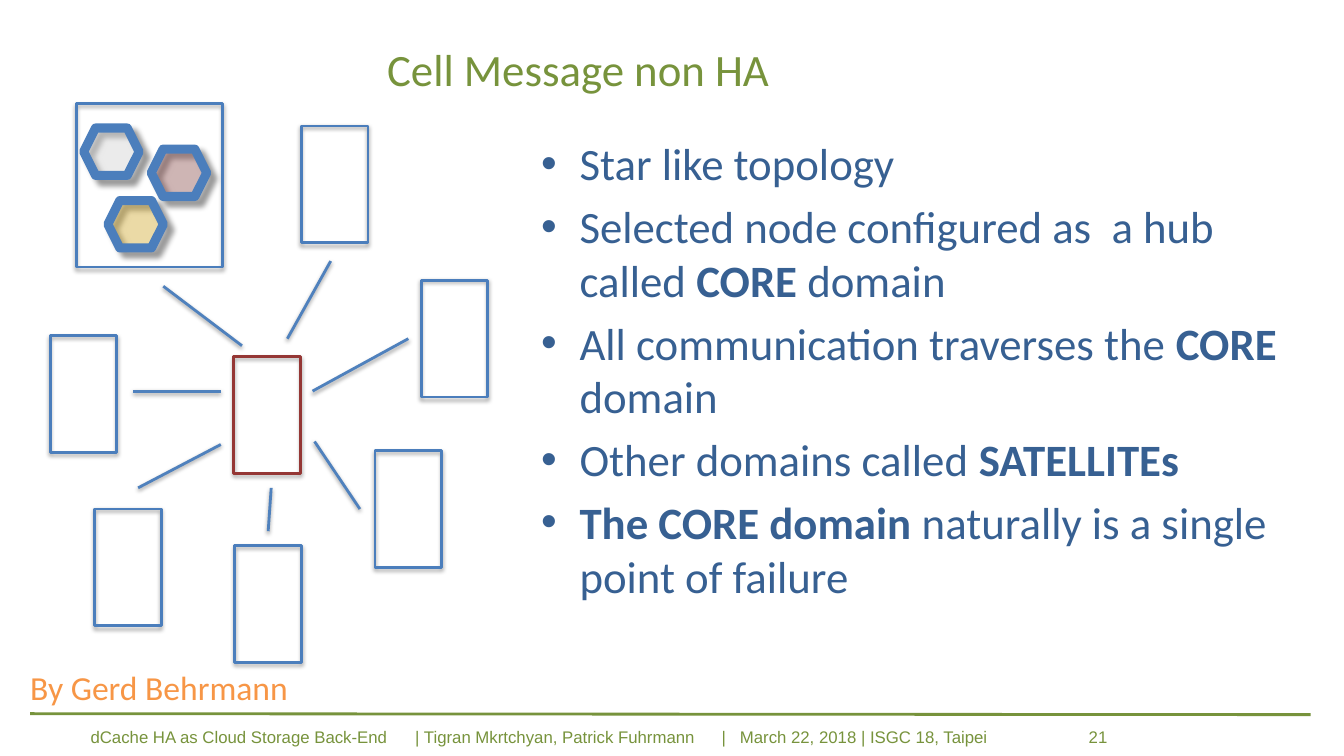
from dataclasses import dataclass
from typing import NamedTuple

from lxml.etree import SubElement
from pptx import Presentation
from pptx.dml.color import RGBColor
from pptx.enum.shapes import MSO_CONNECTOR, MSO_SHAPE
from pptx.enum.text import PP_ALIGN
from pptx.oxml.ns import qn
from pptx.util import Inches, Pt


class Box(NamedTuple):
    left: float
    top: float
    width: float
    height: float


class Shadow(NamedTuple):
    opacity: int
    blur: float
    distance: float
    angle: int


@dataclass(frozen=True)
class Theme:
    green: str = "77933C"
    body_blue: str = "376092"
    node_blue: str = "4B7EBC"
    link_blue: str = "4F81BD"
    core_red: str = "953735"
    orange: str = "F79646"
    white: str = "FFFFFF"
    gold: str = "FFC000"
    font: str = "Calibri"
    footer_font: str = "Arial"
    large: int = 32
    credit: int = 24
    footer: int = 12
    line: float = 2
    cell_line: float = 6.5
    cell_opacity: int = 27
    node_shadow: Shadow = Shadow(35, 3.1, 1.8, 90)
    link_shadow: Shadow = Shadow(38, 3.1, 1.6, 90)
    cell_shadow: Shadow = Shadow(40, 4, 6, 45)


THEME = Theme()

BULLETS = [
    [("Star like topology", False)],
    [("Selected node configured as  a hub called ", False), ("CORE", True), (" domain", False)],
    [("All communication traverses the ", False), ("CORE", True), (" domain", False)],
    [("Other domains called ", False), ("SATELLITEs", True)],
    [("The CORE domain ", True), ("naturally is a single point of failure", False)],
]
FOOTER = "dCache HA as Cloud Storage Back-End\t| Tigran Mkrtchyan, Patrick Fuhrmann\t|\tMarch 22, 2018 | ISGC 18, Taipei\t21"
FOOTER_TABS = [3.22, 6.26, 6.44, 9.9]

NODE_SIZE = (0.66, 1.16)
CELL_SIZE = (0.55, 0.47)
DETAILED_NODE_SIZE = (1.45, 1.62)
CORE_OFFSET = (1.82, 2.51)
DETAILED_NODE_FROM_CORE = (-1.56, -2.51)
SATELLITES_FROM_CORE = [
    (-1.82, -0.21), (-1.38, 1.51), (0.01, 1.87),
    (1.4, 0.93), (1.86, -0.76), (0.67, -2.29),
]
LINKS_FROM_CORE = [
    (0.96, -0.95, 0.53, -0.18),
    (-0.7, -0.7, 0.08, -0.11),
    (-1, 0.34, -0.13, 0.34),
    (-0.95, 1.3, -0.13, 0.87),
    (0.34, 1.73, 0.37, 1.3),
    (0.78, 0.34, 1.73, -0.18),
    (0.8, 0.84, 1.25, 1.51),
]
CELLS = [
    (0.07, 0.24, THEME.white),
    (0.31, 0.96, THEME.gold),
    (0.74, 0.45, THEME.core_red),
]


def add_text(slide, box, paragraphs, *, size, color, font=THEME.font,
             align=PP_ALIGN.LEFT, bullet=None, indent=0.38, tabs=()):
    frame = slide.shapes.add_textbox(*map(Inches, box)).text_frame
    frame.word_wrap = True
    for index, runs in enumerate(paragraphs):
        paragraph = frame.paragraphs[0] if index == 0 else frame.add_paragraph()
        properties = paragraph._p.get_or_add_pPr()
        if bullet:
            properties.set("marL", str(Inches(indent)))
            properties.set("indent", str(-Inches(indent)))
            SubElement(properties, qn("a:buFont"), typeface="Arial")
            SubElement(properties, qn("a:buChar"), char=bullet)
        if tabs:
            tab_list = SubElement(properties, qn("a:tabLst"))
            for position in tabs:
                SubElement(tab_list, qn("a:tab"), pos=str(Inches(position)), algn="l")
        paragraph.alignment = align
        if index:
            paragraph.space_before = Pt(size * 0.2)
        for text, bold in runs:
            run = paragraph.add_run()
            run.text = text
            run.font.name = font
            run.font.size = Pt(size)
            run.font.bold = bold
            run.font.color.rgb = RGBColor.from_string(color)


def add_shadow(effects, shadow):
    outer = SubElement(
        effects, qn("a:outerShdw"), blurRad=str(Pt(shadow.blur)),
        dist=str(Pt(shadow.distance)), dir=str(shadow.angle * 60000),
        algn="ctr", rotWithShape="0")
    color = SubElement(outer, qn("a:srgbClr"), val="000000")
    SubElement(color, qn("a:alpha"), val=str(shadow.opacity * 1000))


def add_outline(slide, kind, box, *, line_color, line_width, shadow, fill=None):
    shape = slide.shapes.add_shape(kind, *map(Inches, box))
    shape.shadow.inherit = False
    shape.line.color.rgb = RGBColor.from_string(line_color)
    shape.line.width = Pt(line_width)
    if fill:
        shape.fill.solid()
        shape.fill.fore_color.rgb = RGBColor.from_string(fill)
        color = shape._element.spPr.find(f"{qn('a:solidFill')}/{qn('a:srgbClr')}")
        SubElement(color, qn("a:alpha"), val=str(THEME.cell_opacity * 1000))
    else:
        shape.fill.background()
    add_shadow(shape._element.spPr.find(qn("a:effectLst")), shadow)


def add_line(slide, ends, *, color, shadow=None):
    connector = slide.shapes.add_connector(MSO_CONNECTOR.STRAIGHT, *map(Inches, ends))
    connector.line.color.rgb = RGBColor.from_string(color)
    connector.line.width = Pt(THEME.line)
    effects = SubElement(connector._element.spPr, qn("a:effectLst"))
    if shadow:
        add_shadow(effects, shadow)


def add_node(slide, left, top, size=NODE_SIZE, color=THEME.node_blue):
    add_outline(slide, MSO_SHAPE.RECTANGLE, (left, top, *size), line_color=color,
                line_width=THEME.line, shadow=THEME.node_shadow)


def add_detailed_node(slide, box):
    add_node(slide, box.left, box.top, (box.width, box.height))
    for x, y, fill in CELLS:
        add_outline(slide, MSO_SHAPE.HEXAGON, (box.left + x, box.top + y, *CELL_SIZE),
                    line_color=THEME.node_blue, line_width=THEME.cell_line,
                    shadow=THEME.cell_shadow, fill=fill)


def add_star_diagram(slide, box):
    core_x, core_y = box.left + CORE_OFFSET[0], box.top + CORE_OFFSET[1]
    x, y = DETAILED_NODE_FROM_CORE
    add_detailed_node(slide, Box(core_x + x, core_y + y, *DETAILED_NODE_SIZE))
    for x, y in SATELLITES_FROM_CORE:
        add_node(slide, core_x + x, core_y + y)
    add_node(slide, core_x, core_y, color=THEME.core_red)
    for x1, y1, x2, y2 in LINKS_FROM_CORE:
        add_line(slide, (core_x + x1, core_y + y1, core_x + x2, core_y + y2),
                 color=THEME.link_blue, shadow=THEME.link_shadow)


def add_footer(slide, box):
    add_text(slide, Box(box.left + 0.5, box.top + 0.08, box.width - 0.5, 0.3),
             [[(FOOTER, False)]], size=THEME.footer, color=THEME.green,
             font=THEME.footer_font, tabs=FOOTER_TABS)
    add_line(slide, (box.left, box.top, box.left + box.width, box.top + 0.01),
             color=THEME.green)


def main():
    presentation = Presentation()
    presentation.slide_width = Inches(13.33)
    presentation.slide_height = Inches(7.5)
    slide = presentation.slides.add_slide(presentation.slide_layouts[6])
    add_footer(slide, Box(0.3, 7.08, 12.7, 0.38))
    add_text(slide, Box(0.68, 0.36, 10.11, 1.25), [[("Cell Message non HA", False)]],
             size=THEME.large, color=THEME.green, align=PP_ALIGN.CENTER)
    add_text(slide, Box(5.27, 1.3, 7.56, 4.75), BULLETS, size=THEME.large,
             color=THEME.body_blue, bullet="•")
    add_star_diagram(slide, Box(0.5, 1.03, 4.34, 5.54))
    add_text(slide, Box(0.2, 6.57, 3.04, 0.49), [[("By Gerd Behrmann", False)]],
             size=THEME.credit, color=THEME.orange)
    presentation.save("out.pptx")


if __name__ == "__main__":
    main()
